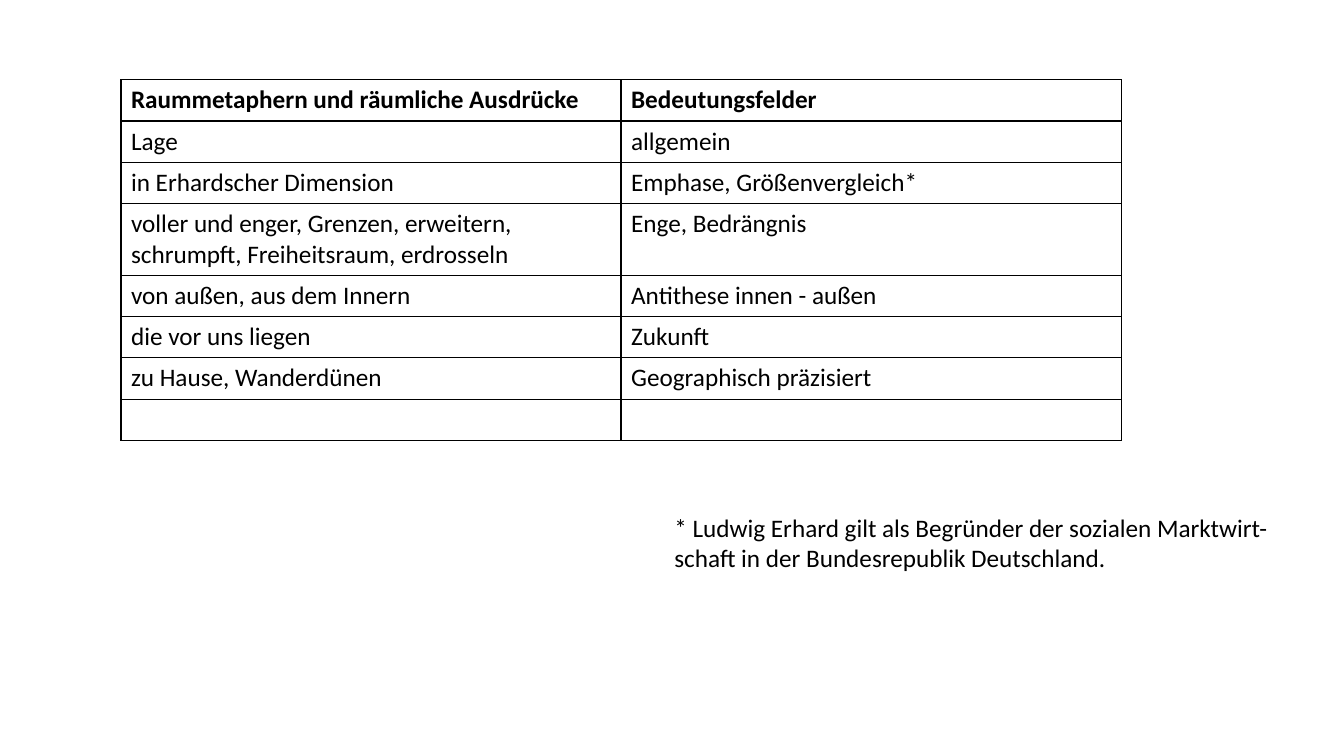
import pptx
import pptx.dml.color
import pptx.enum.text
import pptx.oxml
import pptx.oxml.ns
import pptx.util
from lxml import etree

Inches = pptx.util.Inches
Pt = pptx.util.Pt

FONT = "Calibri"
BLACK = "000000"
METAPHORS = [
    ("Raummetaphern und räumliche Ausdrücke", "Bedeutungsfelder"),
    ("Lage", "allgemein"),
    ("in Erhardscher Dimension", "Emphase, Größenvergleich*"),
    ("voller und enger, Grenzen, erweitern, schrumpft, Freiheitsraum, erdrosseln",
     "Enge, Bedrängnis"),
    ("von außen, aus dem Innern", "Antithese innen - außen"),
    ("die vor uns liegen", "Zukunft"),
    ("zu Hause, Wanderdünen", "Geographisch präzisiert"),
    ("", ""),
]
FOOTNOTE = ("* Ludwig Erhard gilt als Begründer der sozialen Marktwirt-schaft "
            "in der Bundesrepublik Deutschland.")
COLUMN_WIDTH = 4.96
LINE_ROW, WRAPPED_ROW = 0.41, 0.71
WRAPPED_INDEX = 3


def color(hex_value):
    return pptx.dml.color.RGBColor.from_string(hex_value)


def write(paragraph, text, bold=False):
    paragraph.text = text
    paragraph.font.name = FONT
    paragraph.font.size = Pt(18)
    paragraph.font.bold = bold
    paragraph.font.color.rgb = color(BLACK)


def outline(cell):
    properties = cell._tc.get_or_add_tcPr()
    qn = pptx.oxml.ns.qn
    for position, side in enumerate(("lnL", "lnR", "lnT", "lnB")):
        line = etree.Element(qn(f"a:{side}"), w=str(Pt(1)))
        fill = etree.SubElement(line, qn("a:solidFill"))
        etree.SubElement(fill, qn("a:srgbClr"), val=BLACK)
        properties.insert(position, line)


def add_metaphors(slide):
    heights = [WRAPPED_ROW if index == WRAPPED_INDEX else LINE_ROW
               for index in range(len(METAPHORS))]
    table = slide.shapes.add_table(
        len(METAPHORS), 2, Inches(1.2), Inches(0.79),
        Inches(2 * COLUMN_WIDTH), Inches(sum(heights))).table
    table.first_row = False
    table.horz_banding = False
    for column in table.columns:
        column.width = Inches(COLUMN_WIDTH)
    for row_index, entries in enumerate(METAPHORS):
        table.rows[row_index].height = Inches(heights[row_index])
        for column_index, entry in enumerate(entries):
            cell = table.cell(row_index, column_index)
            cell.fill.background()
            outline(cell)
            write(cell.text_frame.paragraphs[0], entry, bold=row_index == 0)


def add_footnote(slide):
    footnote = slide.shapes.add_textbox(
        Inches(6.59), Inches(5.03), Inches(6.38), Inches(0.71)).text_frame
    footnote.word_wrap = True
    footnote.auto_size = pptx.enum.text.MSO_AUTO_SIZE.SHAPE_TO_FIT_TEXT
    write(footnote.paragraphs[0], FOOTNOTE)


def main():
    presentation = pptx.Presentation()
    presentation.slide_width = Inches(13.33)
    presentation.slide_height = Inches(7.5)
    slide = presentation.slides.add_slide(presentation.slide_layouts[6])
    add_metaphors(slide)
    add_footnote(slide)
    presentation.save("out.pptx")


if __name__ == "__main__":
    main()
